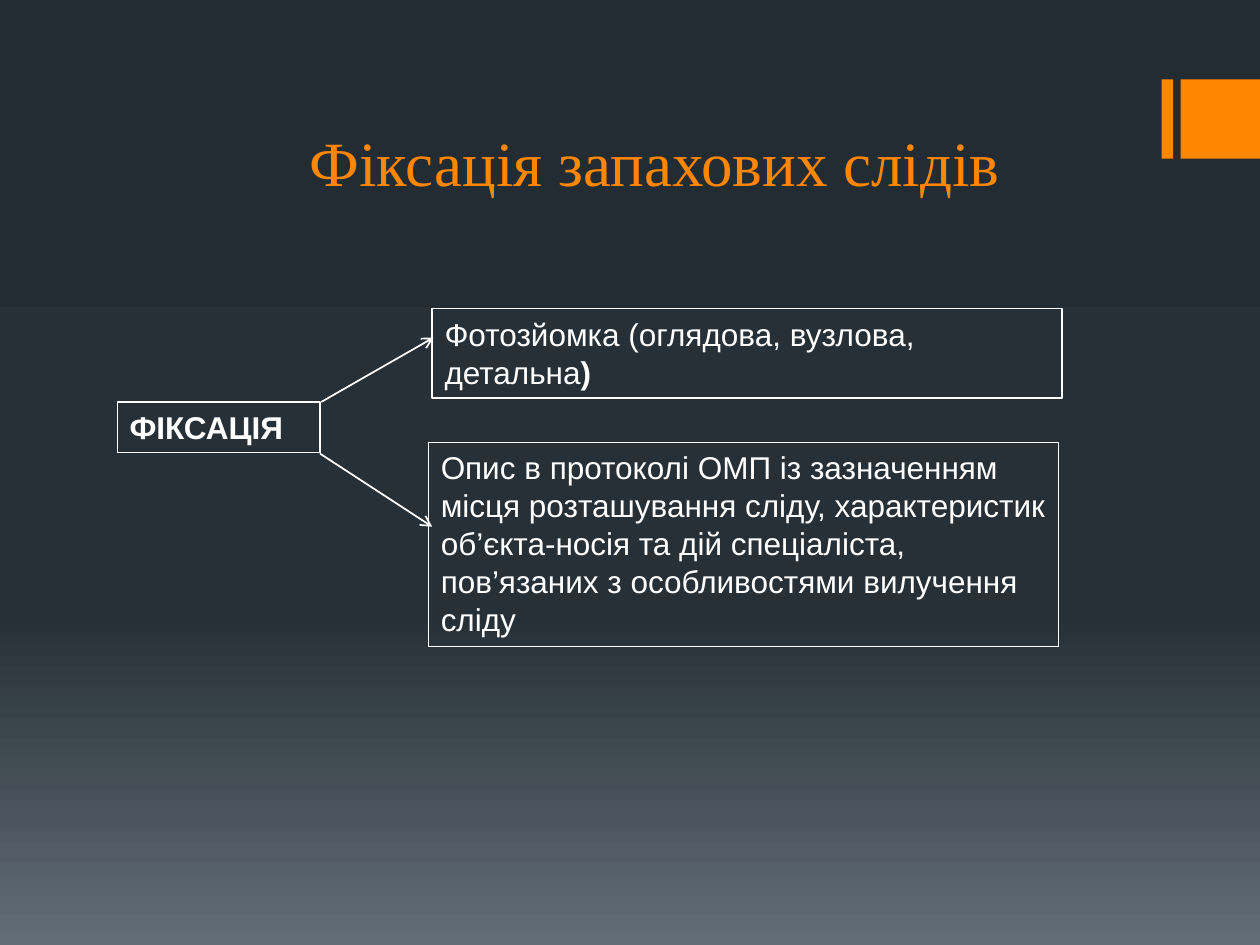
"""Build the slide on recording scent traces."""
import copy

import lxml.etree
import pptx
import pptx.dml.color
import pptx.enum.shapes
import pptx.enum.text
import pptx.oxml.ns
import pptx.util

Inches = pptx.util.Inches
Pt = pptx.util.Pt
RGBColor = pptx.dml.color.RGBColor
qn = pptx.oxml.ns.qn

ORANGE = RGBColor(0xFF, 0x86, 0x00)
WHITE = RGBColor(0xFF, 0xFF, 0xFF)
NIGHT = RGBColor(0x24, 0x2C, 0x33)
SLATE = RGBColor(0x27, 0x30, 0x37)
STEEL = RGBColor(0x63, 0x6D, 0x76)


def add_text(left, top, width, height, runs, font_name, size, color):
    shape = slide.shapes.add_textbox(Inches(left), Inches(top), Inches(width), Inches(height))
    shape.text_frame.word_wrap = True
    paragraph = shape.text_frame.paragraphs[0]
    paragraph.font.name = font_name
    paragraph.font.size = Pt(size)
    paragraph.font.color.rgb = color
    for text, bold in runs:
        run = paragraph.add_run()
        run.text = text
        run.font.bold = bold
    return shape


presentation = pptx.Presentation()
presentation.slide_width = Inches(10)
presentation.slide_height = Inches(7.5)
slide = presentation.slides.add_slide(presentation.slide_layouts[6])

background = slide.background.fill
background.gradient()
background.gradient_angle = 270
first_stop = next(slide.element.iter(qn("a:gs")))
first_stop.addnext(copy.deepcopy(first_stop))
stops = [(0, NIGHT), (0.65, SLATE), (1, STEEL)]
for stop, (position, color) in zip(background.gradient_stops, stops):
    stop.position = position
    stop.color.rgb = color

for left, width in [(9.22, 0.09), (9.37, 0.63)]:
    accent = slide.shapes.add_shape(
        pptx.enum.shapes.MSO_SHAPE.RECTANGLE, Inches(left), Inches(0.63), Inches(width), Inches(0.63)
    )
    accent.shadow.inherit = False
    accent.fill.solid()
    accent.fill.fore_color.rgb = ORANGE
    accent.line.fill.background()

title = add_text(2.36, 0.92, 6.06, 0.71, [("Фіксація запахових слідів", False)],
                 "Times New Roman", 36, ORANGE)
title.text_frame.vertical_anchor = pptx.enum.text.MSO_ANCHOR.BOTTOM

boxes = [
    (0.93, 3.19, 1.61, 0.4, [("ФІКСАЦІЯ", True)]),
    (3.43, 2.45, 5, 0.71, [("Фотозйомка (оглядова, вузлова, детальна", False), (")", True)]),
    (3.4, 3.51, 5, 1.62, [(
        "Опис в протоколі ОМП із зазначенням місця розташування сліду, "
        "характеристик об’єкта-носія та дій спеціаліста, "
        "пов’язаних з особливостями вилучення сліду", False)]),
]
for left, top, width, height, runs in boxes:
    box = add_text(left, top, width, height, runs, "Arial", 18, WHITE)
    box.text_frame.auto_size = pptx.enum.text.MSO_AUTO_SIZE.SHAPE_TO_FIT_TEXT
    box.line.color.rgb = WHITE
    box.line.width = Pt(0.75)

for ends in [(2.55, 3.19, 3.44, 2.68), (2.54, 3.6, 3.43, 4.18)]:
    arrow = slide.shapes.add_connector(
        pptx.enum.shapes.MSO_CONNECTOR.STRAIGHT, *[Inches(value) for value in ends]
    )
    arrow.line.color.rgb = WHITE
    arrow.line.width = Pt(1)
    properties = arrow.element.spPr
    lxml.etree.SubElement(properties.find(qn("a:ln")), qn("a:tailEnd"), type="arrow")
    lxml.etree.SubElement(properties, qn("a:effectLst"))

presentation.save("out.pptx")
